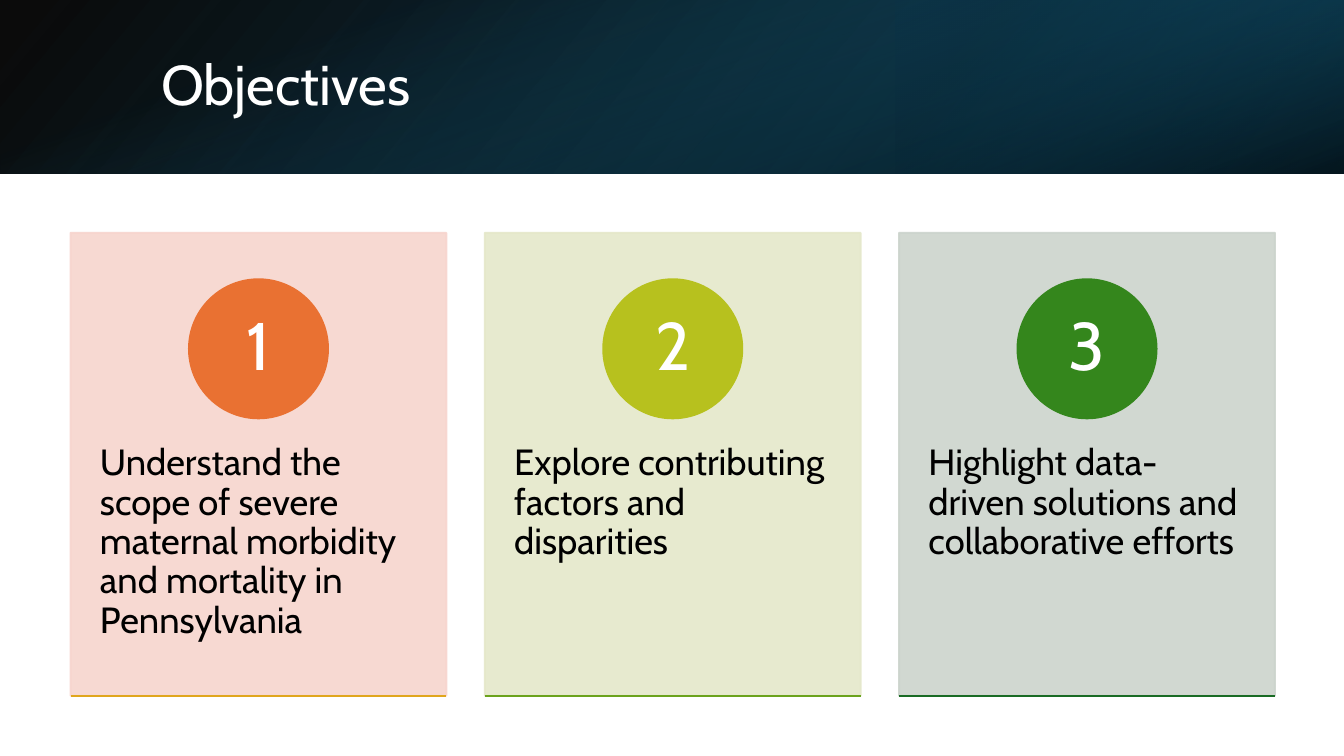
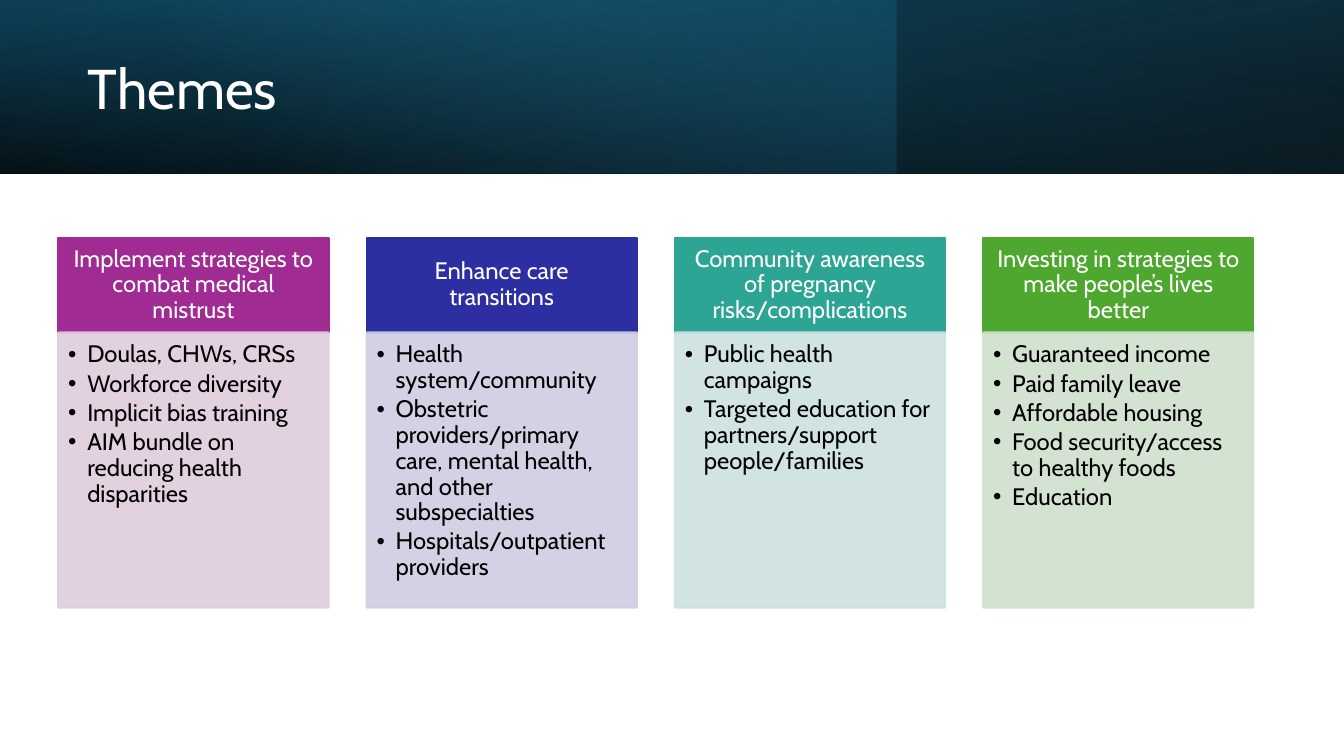
from lxml.etree import SubElement
from pptx import Presentation
from pptx.dml.color import RGBColor
from pptx.enum.shapes import MSO_CONNECTOR as Connector, MSO_SHAPE as Shape
from pptx.enum.text import MSO_ANCHOR as Anchor, PP_ALIGN as Align
from pptx.oxml.ns import qn
from pptx.util import Cm, Pt

FONT = "Cabin"
WIDTH, HEIGHT, BAND_HEIGHT = 33.87, 19.05, 4.38
COLORS = {
    "white": "FFFFFF", "black": "000000",
    "night": "0B3041", "ocean": "104862", "teal": "156082", "sky": "46B1E1",
    "orange": "E97132", "amber": "E0A61D", "blush": "F7D5CE",
    "lime": "B7C11E", "olive": "6BA31D", "cream": "E5E8CA",
    "green": "34861C", "forest": "196B24", "sage": "CCD4CD",
    "purple": "A02B93", "lilac": "DFCDDC",
    "indigo": "2C2EA2", "lavender": "CFCDE0",
    "aqua": "2DA594", "mist": "CDE1E0",
    "leaf": "4EA72E", "mint": "D0E1CD",
}

# Band layers: left, width, rotation, flipped, gradient angle,
# stops of (position %, colour, opacity %)
OBJECTIVES_BAND = [
    (0, WIDTH, 0, True, 140, [(0, "black", 96), (100, "ocean", 100)]),
    (22.58, 11.29, 180, True, 320, [(19, "night", 68), (100, "teal", 79)]),
    (0, WIDTH, 90, False, 340, [(23, "teal", 0), (99, "black", 74)]),
]
THEMES_BAND = [
    (0, WIDTH, 180, True, 100, [(0, "black", 96), (100, "ocean", 100)]),
    (0, 22.58, 0, False, 140, [(0, "teal", 41), (74, "sky", 0)]),
    (0, WIDTH, 0, True, 260, [(0, "black", 63), (78, "teal", 15)]),
]

# Text, circle, bottom rule, card
OBJECTIVES = [
    ("Understand the scope of severe maternal morbidity and mortality in Pennsylvania",
     "orange", "amber", "blush"),
    ("Explore contributing factors and disparities", "lime", "olive", "cream"),
    ("Highlight data-driven solutions and collaborative efforts",
     "green", "forest", "sage"),
]

# Heading, heading colour, body colour, points
THEMES = [
    ("Implement strategies to combat medical mistrust", "purple", "lilac",
     ["Doulas, CHWs, CRSs", "Workforce diversity", "Implicit bias training",
      "AIM bundle on reducing health disparities"]),
    ("Enhance care transitions", "indigo", "lavender",
     ["Health system/community",
      "Obstetric providers/primary care, mental health, and other subspecialties",
      "Hospitals/outpatient providers"]),
    ("Community awareness of pregnancy risks/complications", "aqua", "mist",
     ["Public health campaigns",
      "Targeted education for partners/support people/families"]),
    ("Investing in strategies to make people’s lives better", "leaf", "mint",
     ["Guaranteed income", "Paid family leave", "Affordable housing",
      "Food security/access to healthy foods", "Education"]),
]


def rgb(name):
    return RGBColor.from_string(COLORS[name])


def add_box(page, kind, left, top, width, height, color, opacity=100):
    """Add a shape whose fill and outline share one colour and opacity."""
    box = page.shapes.add_shape(kind, Cm(left), Cm(top), Cm(width), Cm(height))
    box.shadow.inherit = False
    box.fill.solid()
    box.fill.fore_color.rgb = rgb(color)
    box.line.color.rgb = rgb(color)
    box.line.width = Pt(1.5)
    if opacity < 100:
        for paint in box.element.spPr.iter(qn("a:srgbClr")):
            SubElement(paint, qn("a:alpha"), val=str(opacity * 1000))
    return box


def write(box, lines, size, color, align=Align.LEFT, anchor=Anchor.TOP,
          insets=(0.25, 0.13, 0.25, 0.13), bulleted=False):
    """Fill a box with paragraphs; insets run left, top, right, bottom."""
    frame = box.text_frame
    frame.word_wrap = True
    frame.vertical_anchor = anchor
    (frame.margin_left, frame.margin_top,
     frame.margin_right, frame.margin_bottom) = map(Cm, insets)
    for index, line in enumerate(lines):
        para = frame.add_paragraph() if index else frame.paragraphs[0]
        para.text = line
        para.alignment = align
        para.line_spacing = 0.9
        para.font.name = FONT
        para.font.size = Pt(size)
        para.font.color.rgb = rgb(color)
        if bulleted:
            para.space_after = Pt(2.5)
            props = para._p.get_or_add_pPr()
            props.set("marL", str(Cm(0.48)))
            props.set("indent", str(-Cm(0.48)))
            bullet_font = SubElement(props, qn("a:buFont"), typeface="Arial")
            bullet_font.addnext(SubElement(props, qn("a:buChar"), char="•"))
            # Bullets come before the default run properties in the schema.
            defaults = props.find(qn("a:defRPr"))
            if defaults is not None:
                props.append(defaults)


def add_band_layer(page, left, width, rotation, flipped, angle, stops):
    # A quarter turn swaps the sides around an unchanged centre.
    across, down = (BAND_HEIGHT, width) if rotation == 90 else (width, BAND_HEIGHT)
    layer = page.shapes.add_shape(
        Shape.RECTANGLE, Cm(left + (width - across) / 2),
        Cm((BAND_HEIGHT - down) / 2), Cm(across), Cm(down))
    layer.shadow.inherit = False
    layer.rotation = rotation
    layer.line.fill.background()
    layer.fill.gradient()
    props = layer.element.spPr
    if flipped:
        props.find(qn("a:xfrm")).set("flipH", "1")
    gradient = props.find(qn("a:gradFill"))
    gradient.clear()
    gradient.set("rotWithShape", "1")
    stop_list = SubElement(gradient, qn("a:gsLst"))
    for position, color, opacity in stops:
        stop = SubElement(stop_list, qn("a:gs"), pos=str(position * 1000))
        paint = SubElement(stop, qn("a:srgbClr"), val=COLORS[color])
        SubElement(paint, qn("a:alpha"), val=str(opacity * 1000))
    SubElement(gradient, qn("a:lin"), ang=str(angle * 60000), scaled="0")


def add_page(deck, title, title_area, band):
    page = deck.slides.add_slide(deck.slide_layouts[6])
    for layer in band:
        add_band_layer(page, *layer)
    box = page.shapes.add_textbox(*map(Cm, title_area))
    write(box, [title], 40, "white", anchor=Anchor.MIDDLE)
    return page


def add_rule(page, left, top, width, color):
    rule = page.shapes.add_connector(
        Connector.STRAIGHT, Cm(left), Cm(top), Cm(left + width), Cm(top))
    rule.line.color.rgb = rgb(color)
    rule.line.width = Pt(1.5)
    SubElement(rule.element.spPr, qn("a:effectLst"))


def add_objectives(page):
    top, width, height, pitch, circle = 5.87, 9.47, 11.66, 10.44, 3.5
    for index, (text, accent, rule, tint) in enumerate(OBJECTIVES):
        left = 1.78 + index * pitch
        card = add_box(page, Shape.RECTANGLE, left, top, width, height, tint, 90)
        write(card, [text], 26, "black", insets=(0.74, 5.33, 0.74, 0.5))
        badge = add_box(page, Shape.OVAL, left + (width - circle) / 2, 7.04,
                        circle, circle, accent)
        write(badge, [str(index + 1)], 48, "white", Align.CENTER, Anchor.MIDDLE,
              (0, 0, 0, 0))
        add_rule(page, left, top + height, width, rule)


def add_themes(page):
    top, width, pitch, head_height, body_height = 5.99, 6.81, 7.77, 2.39, 6.93
    for index, (heading, accent, tint, points) in enumerate(THEMES):
        left = 1.47 + index * pitch
        head = add_box(page, Shape.RECTANGLE, left, top, width, head_height, accent)
        write(head, [heading], 17, "white", Align.CENTER, Anchor.MIDDLE,
              (0.33, 0.2, 0.33, 0.2))
        body = add_box(page, Shape.RECTANGLE, left, top + head_height,
                       width, body_height, tint, 90)
        write(body, points, 17, "black", insets=(0.25, 0.25, 0.33, 0.38),
              bulleted=True)


def main():
    deck = Presentation()
    deck.slide_width, deck.slide_height = Cm(WIDTH), Cm(HEIGHT)
    add_objectives(add_page(deck, "Objectives", (3.81, 0.97, 27.89, 2.44),
                            OBJECTIVES_BAND))
    add_themes(add_page(deck, "Themes", (1.96, 0.69, 19.61, 3.23), THEMES_BAND))
    deck.save("out.pptx")


if __name__ == "__main__":
    main()
